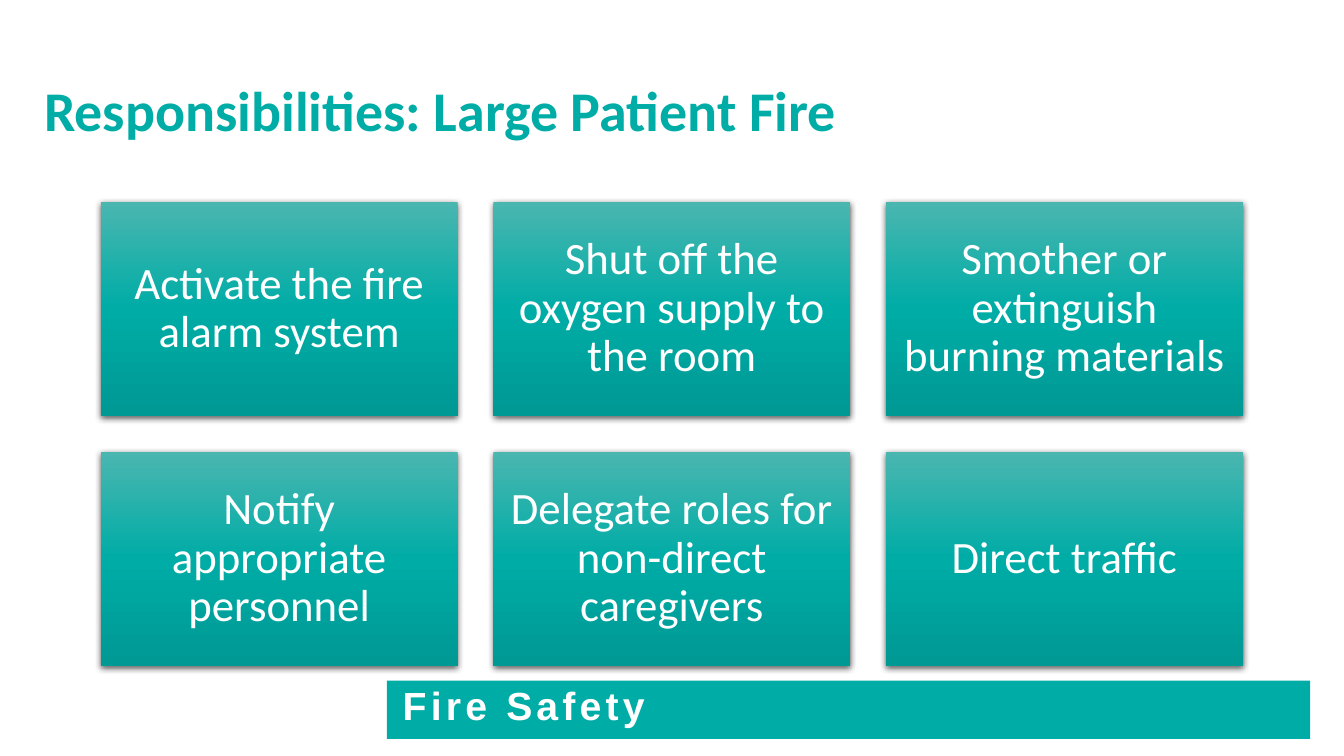
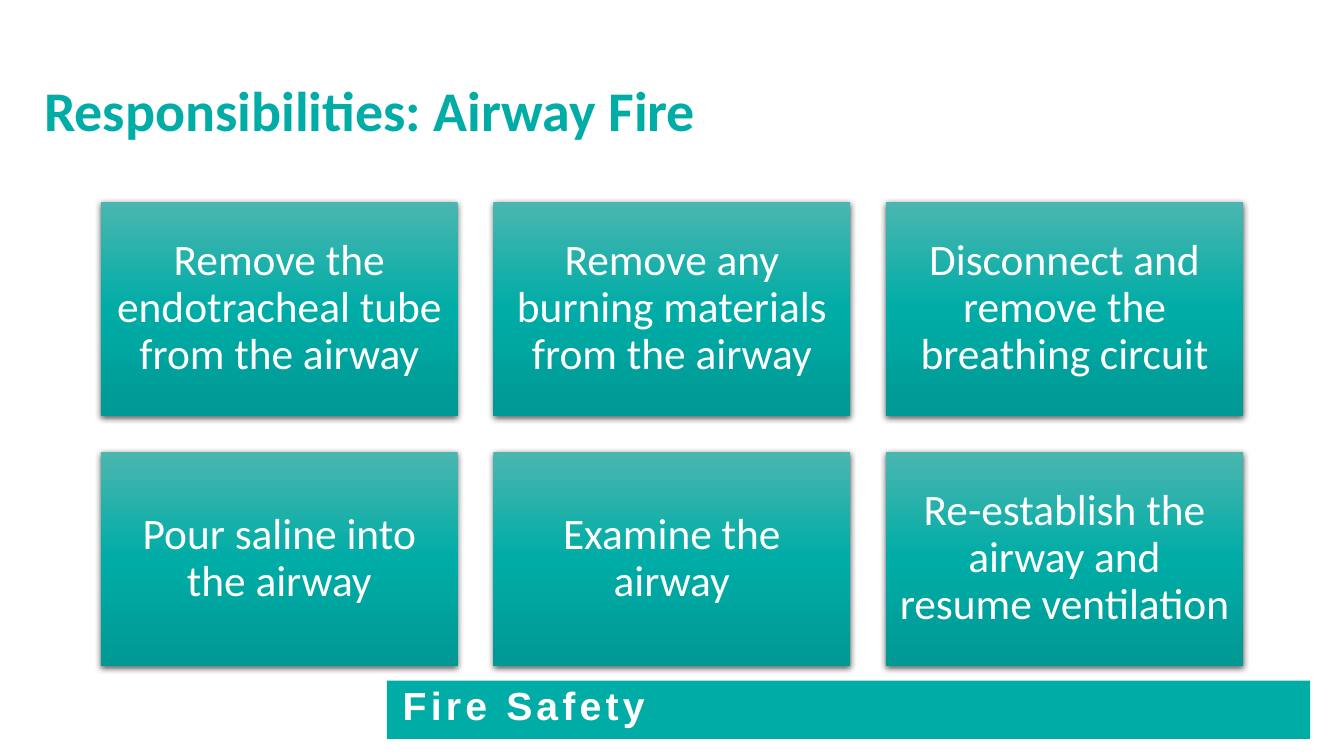
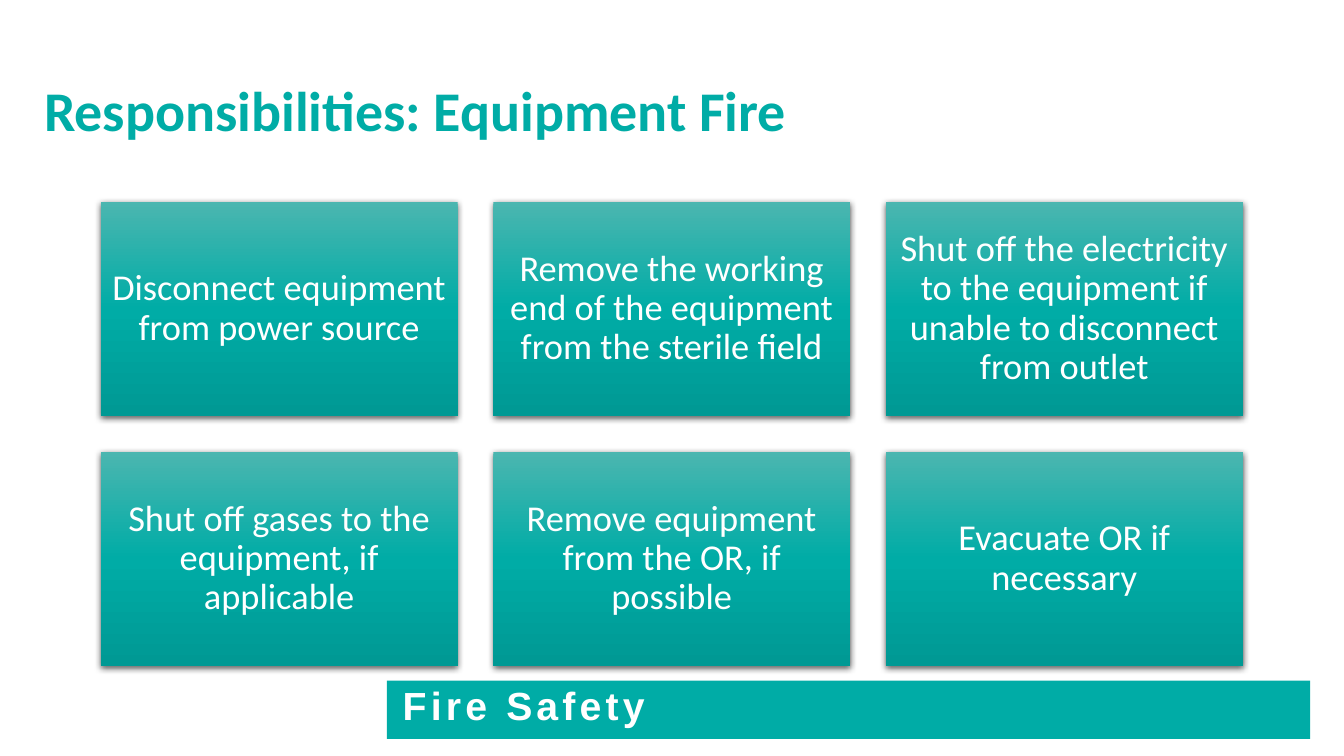
from pptx import Presentation
from pptx.dml.color import RGBColor
from pptx.enum.shapes import MSO_SHAPE
from pptx.enum.text import MSO_ANCHOR, MSO_AUTO_SIZE, PP_ALIGN
from pptx.oxml import parse_xml
from pptx.oxml.ns import nsdecls
from pptx.util import Cm, Pt

# Shared style
TEAL, WHITE = "00ACA6", "FFFFFF"
CARD_STOPS = [(0, "4BB6B0"), (50, TEAL), (100, "009994")]
TITLE_ONLY = 5

# Boxes in cm: left, top, width, height
TITLE_BOX = (0.86, 1.02, 32.16, 3.68)
GRID_BOX = (2.54, 5.08, 28.78, 11.7)
BAND_BOX = (9.75, 17.15, 23.27, 1.47)
COLUMNS, ROWS, GAP = 3, 2, 0.9

# Title, text size, card inset in cm, card texts
SLIDES = [
    ("Responsibilities: Large Patient Fire", 32, 0.34, [
        "Activate the fire alarm system",
        "Shut off the oxygen supply to the room",
        "Smother or extinguish burning materials",
        "Notify appropriate personnel",
        "Delegate roles for non-direct caregivers",
        "Direct traffic",
    ]),
    ("Responsibilities: Airway Fire", 31, 0.33, [
        "Remove the endotracheal tube from the airway",
        "Remove any burning materials from the airway",
        "Disconnect and remove the breathing circuit",
        "Pour saline into the airway",
        "Examine the airway",
        "Re-establish the airway and resume ventilation",
    ]),
    ("Responsibilities: Equipment Fire", 26, 0.27, [
        "Disconnect equipment from power source",
        "Remove the working end of the equipment from the sterile field",
        "Shut off the electricity to the equipment if unable to disconnect "
        "from outlet",
        "Shut off gases to the equipment, if applicable",
        "Remove equipment from the OR, if possible",
        "Evacuate OR if necessary",
    ]),
]


def rgb(value):
    return RGBColor.from_string(value)


def set_text(sp, text, size, color, font="Calibri", bold=False,
             align=PP_ALIGN.LEFT, anchor=MSO_ANCHOR.MIDDLE, spacing=0.9):
    """Write one paragraph into a shape and return its run."""
    tf = sp.text_frame
    tf.text = text
    tf.word_wrap = True
    tf.auto_size = MSO_AUTO_SIZE.NONE
    tf.vertical_anchor = anchor
    p = tf.paragraphs[0]
    p.alignment = align
    p.line_spacing = spacing
    r = p.runs[0]
    r.font.name, r.font.size, r.font.bold = font, Pt(size), bold
    r.font.color.rgb = rgb(color)
    return r


def set_insets(sp, side, top):
    tf = sp.text_frame
    tf.margin_left = tf.margin_right = Cm(side)
    tf.margin_top = tf.margin_bottom = Cm(top)


def add_rect(s, box):
    sp = s.shapes.add_shape(MSO_SHAPE.RECTANGLE, *map(Cm, box))
    sp.line.fill.background()
    return sp


def add_title(s, box, text):
    sp = s.shapes.title
    sp.left, sp.top, sp.width, sp.height = map(Cm, box)
    set_text(sp, text, 40, TEAL, bold=True)


def add_card(s, box, text, size, inset):
    sp = add_rect(s, box)
    # Vertical gradient and soft shadow below
    stops = "".join(f'<a:gs pos="{pos * 1000}"><a:srgbClr val="{color}"/></a:gs>'
                    for pos, color in CARD_STOPS)
    spPr = sp.element.spPr
    spPr.ln.addprevious(parse_xml(
        f'<a:gradFill {nsdecls("a")} rotWithShape="1"><a:gsLst>{stops}</a:gsLst>'
        '<a:lin ang="5400000" scaled="0"/></a:gradFill>'))
    spPr.append(parse_xml(
        f'<a:effectLst {nsdecls("a")}>'
        f'<a:outerShdw blurRad="{Pt(4.5)}" dist="{Pt(1.5)}" dir="5400000" '
        'algn="ctr" rotWithShape="0"><a:srgbClr val="000000">'
        '<a:alpha val="63000"/></a:srgbClr></a:outerShdw></a:effectLst>'))
    set_insets(sp, inset, inset)
    set_text(sp, text, size, WHITE, align=PP_ALIGN.CENTER)


def add_card_grid(s, box, texts, size, inset):
    left, top, width, height = box
    card_w = (width - (COLUMNS - 1) * GAP) / COLUMNS
    card_h = (height - (ROWS - 1) * GAP) / ROWS
    for i, text in enumerate(texts):
        row, col = divmod(i, COLUMNS)
        card = (left + col * (card_w + GAP), top + row * (card_h + GAP),
                card_w, card_h)
        add_card(s, card, text, size, inset)


def add_footer_band(s, box, text):
    sp = add_rect(s, box)
    sp.shadow.inherit = False
    sp.fill.solid()
    sp.fill.fore_color.rgb = rgb(TEAL)
    set_insets(sp, 0.4, 0.25)
    r = set_text(sp, text, 28, WHITE, font="Arial", bold=True,
                 anchor=MSO_ANCHOR.TOP, spacing=0.8)
    r.font._element.set("spc", "300")  # 3 pt letter spacing


def main():
    prs = Presentation()
    prs.slide_width, prs.slide_height = Cm(33.87), Cm(19.05)
    for title, size, inset, texts in SLIDES:
        s = prs.slides.add_slide(prs.slide_layouts[TITLE_ONLY])
        add_footer_band(s, BAND_BOX, "Fire Safety")
        add_title(s, TITLE_BOX, title)
        add_card_grid(s, GRID_BOX, texts, size, inset)
    prs.save("out.pptx")


if __name__ == "__main__":
    main()
